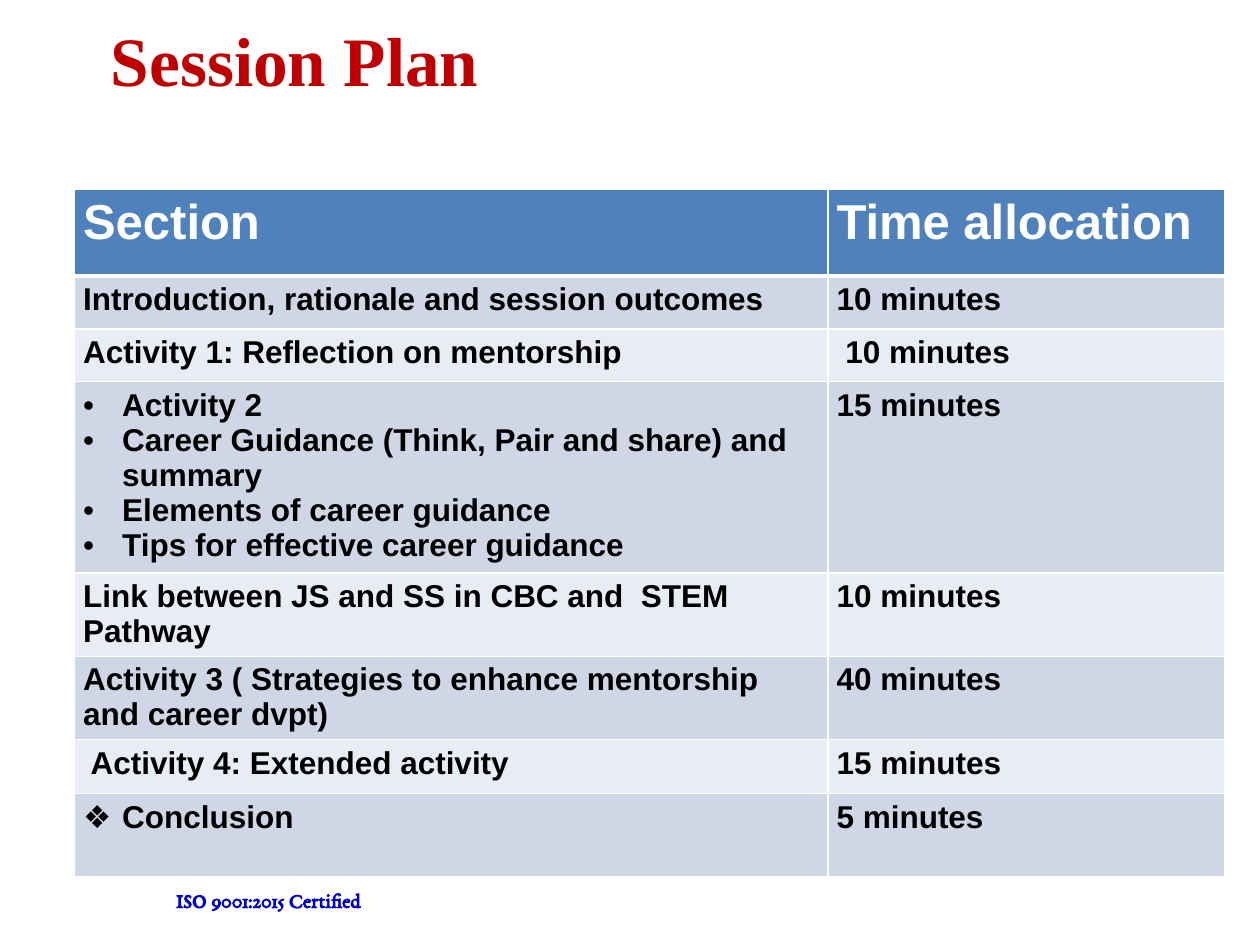
"""Build the Session Plan slide with its timetable."""
from lxml.etree import SubElement
from pptx import Presentation
from pptx.dml.color import RGBColor
from pptx.enum.text import MSO_ANCHOR, MSO_AUTO_SIZE, PP_ALIGN
from pptx.oxml.ns import qn
from pptx.util import Inches, Pt

RED = RGBColor(0xC0, 0x00, 0x00)
BLUE = RGBColor(0x00, 0x00, 0xCC)
WHITE = RGBColor(0xFF, 0xFF, 0xFF)
BLACK = RGBColor(0x00, 0x00, 0x00)
HEADER = RGBColor(0x4F, 0x81, 0xBD)
BANDS = (RGBColor(0xCF, 0xD7, 0xE7), RGBColor(0xE8, 0xEC, 0xF4))

COLUMNS = (5.98, 3.15)
ROWS = [
    (0.69, "Section", "Time allocation", None),
    (0.42, "Introduction, rationale and session outcomes", "10 minutes", None),
    (0.42, "Activity 1: Reflection on mentorship", " 10 minutes", None),
    (1.52, "Activity 2\n"
           "Career Guidance (Think, Pair and share) and summary\n"
           "Elements of career guidance\n"
           "Tips for effective career guidance", "15 minutes", "•"),
    (0.66, "Link between JS and SS in CBC and  STEM Pathway", "10 minutes", None),
    (0.66, "Activity 3 ( Strategies to enhance mentorship and career dvpt)",
     "40 minutes", None),
    (0.43, " Activity 4: Extended activity", "15 minutes", None),
    (0.66, "Conclusion", "5 minutes", "❖"),
]


def add_color(parent, color):
    SubElement(parent, qn("a:srgbClr")).set("val", str(color))


def add_bullet(p, char):
    pPr = p._p.get_or_add_pPr()
    pPr.set("marL", str(Inches(0.31)))
    pPr.set("indent", str(-Inches(0.31)))
    add_color(SubElement(pPr, qn("a:buClr")), BLACK)
    SubElement(pPr, qn("a:buFont")).set("typeface", "Arial")
    SubElement(pPr, qn("a:buChar")).set("char", char)


def add_borders(cell, bottom):
    tcPr = cell._tc.get_or_add_tcPr()
    widths = {"a:lnL": 1, "a:lnR": 1, "a:lnT": 1, "a:lnB": bottom}
    for i, (tag, width) in enumerate(widths.items()):
        ln = SubElement(tcPr, qn(tag))
        ln.set("w", str(Pt(width)))
        add_color(SubElement(ln, qn("a:solidFill")), WHITE)
        tcPr.insert(i, ln)


def write(tf, text, *, size, color, font="Arial", align=PP_ALIGN.LEFT,
          bullet=None, spacing=None):
    for i, line in enumerate(text.split("\n")):
        p = tf.add_paragraph() if i else tf.paragraphs[0]
        p.alignment = align
        if bullet:
            add_bullet(p, bullet)
        if spacing:
            p.line_spacing = Pt(spacing)
        r = p.add_run()
        r.text = line
        r.font.name = font
        r.font.size = Pt(size)
        r.font.bold = True
        r.font.color.rgb = color


class SlideBuilder:
    def __init__(self, prs):
        self.s = prs.slides.add_slide(prs.slide_layouts[5])
        self.head = dict(size=28, color=WHITE)
        self.body = dict(size=18, color=BLACK, spacing=20)

    def title(self, text, x, y, w, h):
        sp = self.s.shapes.title
        sp.left, sp.top, sp.width, sp.height = map(Inches, (x, y, w, h))
        tf = sp.text_frame
        tf.auto_size = MSO_AUTO_SIZE.NONE
        tf.vertical_anchor = MSO_ANCHOR.MIDDLE
        write(tf, text, size=39.6, color=RED, font="Times New Roman",
              align=PP_ALIGN.CENTER)

    def label(self, text, x, y, w, h):
        sp = self.s.shapes.add_textbox(*map(Inches, (x, y, w, h)))
        sp.text_frame.word_wrap = True
        write(sp.text_frame, text, size=12, color=BLUE, font="EB Garamond")

    def table(self, rows, columns, x, y):
        height = sum(row[0] for row in rows)
        frame = self.s.shapes.add_table(
            len(rows), len(columns),
            *map(Inches, (x, y, sum(columns), height)))
        table = frame.table
        for col, width in zip(table.columns, columns):
            col.width = Inches(width)
        for i, (h, section, time, bullet) in enumerate(rows):
            table.rows[i].height = Inches(h)
            fill = BANDS[(i - 1) % 2] if i else HEADER
            style = self.body if i else self.head
            self.cell(table.cell(i, 0), section, fill, bullet=bullet, **style)
            self.cell(table.cell(i, 1), time, fill, **style)
        for cell in table.rows[0].cells:
            add_borders(cell, bottom=3)

    def cell(self, cell, text, fill, **style):
        cell.fill.solid()
        cell.fill.fore_color.rgb = fill
        cell.margin_left = cell.margin_right = Inches(0.07)
        cell.margin_top = cell.margin_bottom = Inches(0.05)
        write(cell.text_frame, text, **style)


def main():
    prs = Presentation()
    prs.slide_width, prs.slide_height = Inches(10), Inches(7.5)
    slide = SlideBuilder(prs)
    slide.title("Session Plan", 0.69, 0.11, 3.3, 0.71)
    slide.table(ROWS, COLUMNS, 0.59, 1.5)
    slide.label("ISO 9001:2015 Certified", 1.3, 6.99, 5.19, 0.3)
    prs.save("out.pptx")


if __name__ == "__main__":
    main()
